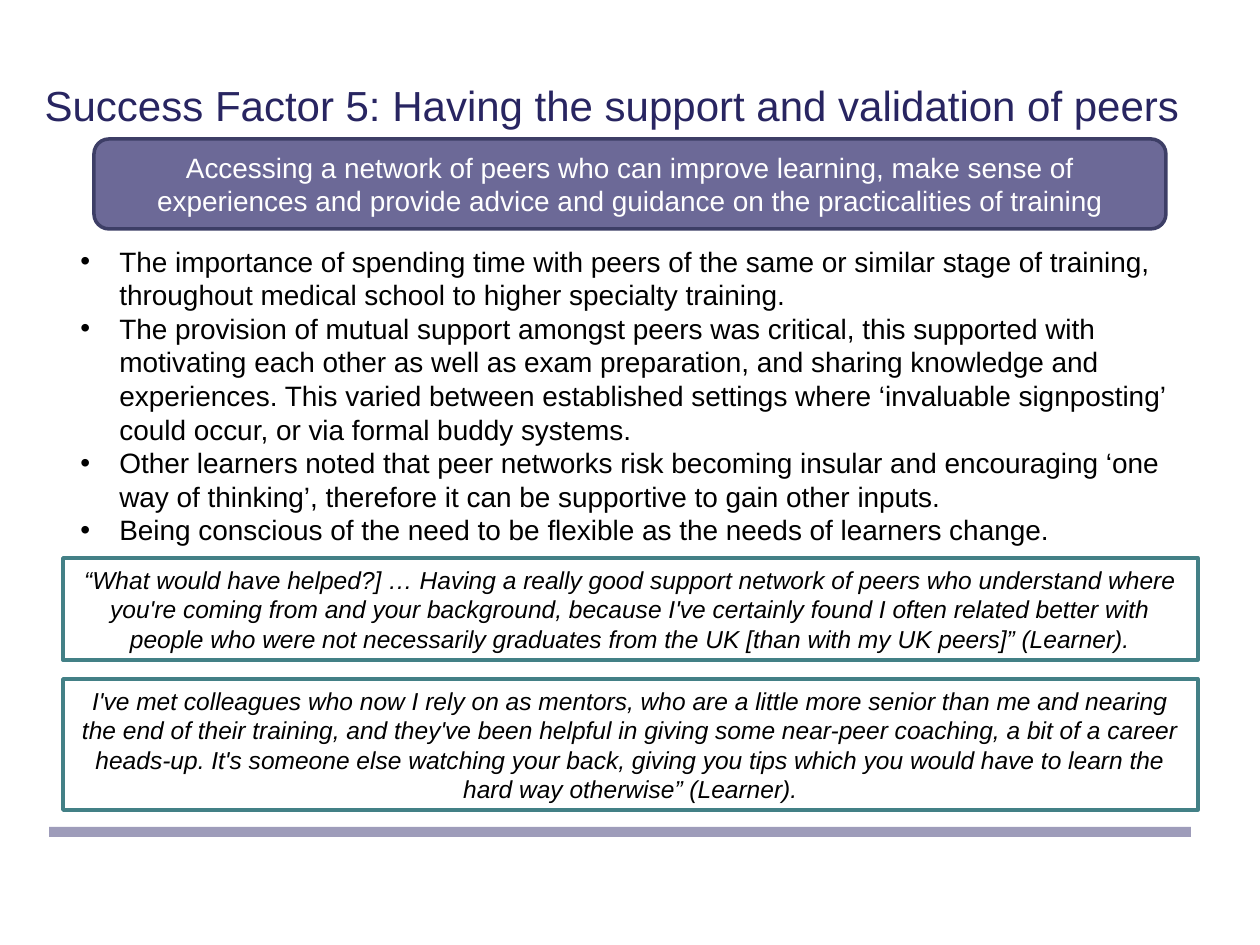
import pptx
import pptx.util
import pptx.dml.color
import pptx.enum.shapes
import pptx.enum.text
import pptx.oxml.ns
import lxml.etree

PX_PER_INCH = 126
FONT = "Arial"
COLORS = {
    "title": "282561",
    "banner": "6C6997",
    "banner_line": "3D3E66",
    "rule": "9E9CBA",
    "quote_line": "438086",
    "white": "FFFFFF",
    "black": "000000",
}
TITLE = "Success Factor 5: Having the support and validation of peers"
BANNER = (
    "Accessing a network of peers who can improve learning, make sense of "
    "experiences and provide advice and guidance on the practicalities of training"
)
BULLETS = [
    "The importance of spending time with peers of the same or similar stage of training, "
    "throughout medical school to higher specialty training.",
    "The provision of mutual support amongst peers was critical, this supported with "
    "motivating each other as well as exam preparation, and sharing knowledge and "
    "experiences. This varied between established settings where ‘invaluable signposting’ "
    "could occur, or via formal buddy systems.",
    "Other learners noted that peer networks risk becoming insular and encouraging ‘one "
    "way of thinking’, therefore it can be supportive to gain other inputs.",
    "Being conscious of the need to be flexible as the needs of learners change.",
]
QUOTES = [
    (558, 102, "“What would have helped?] … Having a really good support network of peers "
     "who understand where you're coming from and your background, because I've certainly "
     "found I often related better with people who were not necessarily graduates from the "
     "UK [than with my UK peers]” (Learner)."),
    (679, 131, "I've met colleagues who now I rely on as mentors, who are a little more "
     "senior than me and nearing the end of their training, and they've been helpful in "
     "giving some near-peer coaching, a bit of a career heads-up. It's someone else watching "
     "your back, giving you tips which you would have to learn the hard way otherwise” "
     "(Learner)."),
]


def px(length):
    return pptx.util.Emu(round(length * 914400 / PX_PER_INCH))


def color(name):
    return pptx.dml.color.RGBColor.from_string(COLORS[name])


def format_text(text_frame, size, color_name, alignment, italic=False):
    text_frame.word_wrap = True
    for paragraph in text_frame.paragraphs:
        paragraph.alignment = alignment
        for run in paragraph.runs:
            run.font.name = FONT
            run.font.size = pptx.util.Pt(size)
            run.font.italic = italic
            run.font.color.rgb = color(color_name)


def add_title(slide):
    title = slide.shapes.title
    title.left, title.top, title.width, title.height = map(px, (32, 26, 1197, 158))
    title.text_frame.text = TITLE
    title.text_frame.vertical_anchor = pptx.enum.text.MSO_ANCHOR.MIDDLE
    format_text(title.text_frame, 24, "title", pptx.enum.text.PP_ALIGN.LEFT)


def add_box(slide, kind, bounds, fill, line=None):
    shape = slide.shapes.add_shape(kind, *map(px, bounds))
    shape.shadow.inherit = False
    shape.fill.solid()
    shape.fill.fore_color.rgb = color(fill)
    if line:
        shape.line.color.rgb = color(line)
        shape.line.width = pptx.util.Pt(2)
    else:
        shape.line.fill.background()
    return shape


def add_text_box(slide, kind, bounds, fill, line, text, size, text_color, italic=False):
    shape = add_box(slide, kind, bounds, fill, line)
    shape.text_frame.text = text
    format_text(shape.text_frame, size, text_color, pptx.enum.text.PP_ALIGN.CENTER, italic)


def add_bullets(slide, bounds, items):
    text_frame = slide.shapes.add_textbox(*map(px, bounds)).text_frame
    text_frame.text = "\n".join(items)
    for paragraph in text_frame.paragraphs:
        properties = paragraph._p.get_or_add_pPr()
        properties.set("marL", str(px(39)))
        properties.set("indent", str(px(-39)))
        font = lxml.etree.SubElement(properties, pptx.oxml.ns.qn("a:buFont"))
        font.set("typeface", FONT)
        bullet = lxml.etree.SubElement(properties, pptx.oxml.ns.qn("a:buChar"))
        bullet.set("char", "•")
    format_text(text_frame, 16, "black", pptx.enum.text.PP_ALIGN.LEFT)


def main():
    presentation = pptx.Presentation()
    presentation.slide_width = px(1260)
    presentation.slide_height = px(945)
    slide = presentation.slides.add_slide(presentation.slide_layouts[5])
    shapes = pptx.enum.shapes.MSO_SHAPE

    add_box(slide, shapes.RECTANGLE, (49, 827, 1142, 10), "rule")
    add_title(slide)
    add_text_box(slide, shapes.ROUNDED_RECTANGLE, (94, 139, 1072, 90),
                 "banner", "banner_line", BANNER, 16, "white")
    add_bullets(slide, (68, 238, 1124, 386), BULLETS)
    for top, height, quote in QUOTES:
        add_text_box(slide, shapes.RECTANGLE, (63, top, 1135, height),
                     "white", "quote_line", quote, 14, "black", italic=True)

    presentation.save("out.pptx")


if __name__ == "__main__":
    main()
